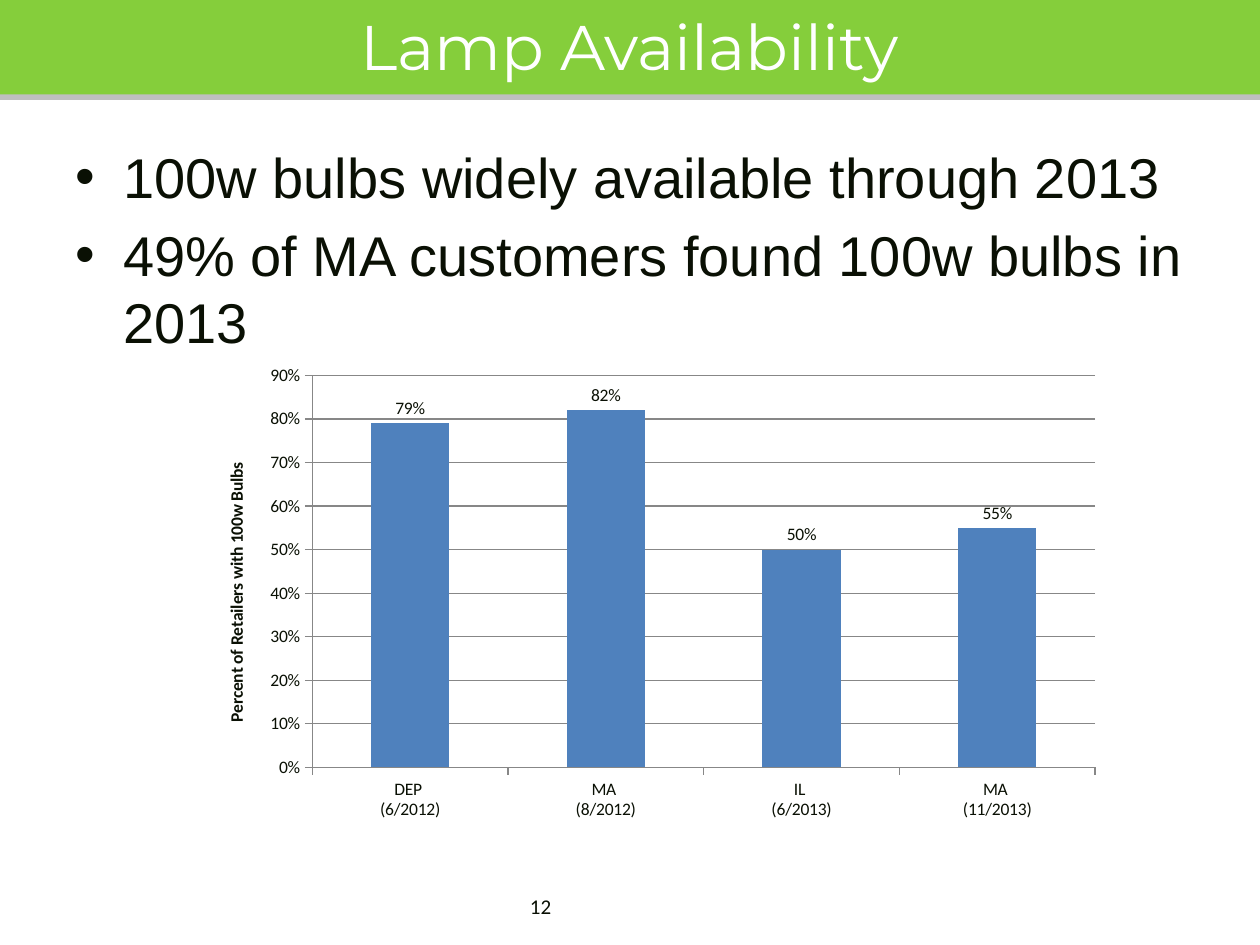
from typing import Any, NamedTuple

from lxml import etree
from pptx import Presentation
from pptx.chart.data import CategoryChartData
from pptx.dml.color import RGBColor
from pptx.enum.chart import XL_CHART_TYPE, XL_LABEL_POSITION, XL_TICK_MARK
from pptx.enum.shapes import MSO_CONNECTOR, MSO_SHAPE
from pptx.enum.text import MSO_ANCHOR, PP_ALIGN
from pptx.oxml.ns import qn
from pptx.util import Inches, Pt

COLUMN = XL_CHART_TYPE.COLUMN_CLUSTERED
OUTSIDE_END = XL_LABEL_POSITION.OUTSIDE_END
TICK_OUT = XL_TICK_MARK.OUTSIDE
MIDDLE, TOP = MSO_ANCHOR.MIDDLE, MSO_ANCHOR.TOP
CENTER, LEFT = PP_ALIGN.CENTER, PP_ALIGN.LEFT

GREEN = RGBColor(0x85, 0xCE, 0x3B)
GREY = RGBColor(0xBF, 0xBF, 0xBF)
AXIS_GREY = RGBColor(0x87, 0x87, 0x87)
BLUE = RGBColor(0x4F, 0x81, 0xBD)
INK = RGBColor(0x0A, 0x10, 0x04)
WHITE = RGBColor(0xFF, 0xFF, 0xFF)

SLIDE_WIDTH, SLIDE_HEIGHT = Inches(10), Inches(7.5)
BULLET_INDENT = Inches(0.38)


class Box(NamedTuple):
    """Left, top, width and height as percentages of the slide."""
    left: float
    top: float
    width: float
    height: float

    def lengths(self) -> tuple[int, ...]:
        sizes = (SLIDE_WIDTH, SLIDE_HEIGHT) * 2
        return tuple(round(size * share / 100) for size, share in zip(sizes, self))


TITLE_BOX = Box(-0.1, -0.4, 100.1, 10.4)
BODY_BOX = Box(5, 14.4, 91.7, 25.6)
CHART_BOX = Box(15.8, 37.73, 72.5, 50)
NUMBER_BOX = Box(37.5, 94.4, 10.8, 2.93)
RULE_TOP = 0.76

TITLE_FONT = {"name": "Montserrat", "size": Pt(36)}
BODY_FONT = {"name": "Arial", "size": Pt(32)}
NUMBER_FONT = {"name": "Calibri", "size": Pt(12)}
CHART_FONT = {"name": "Calibri", "size": Pt(10)}
BULLETS = [
    "100w bulbs widely available through 2013",
    "49% of MA customers found 100w bulbs in 2013",
]
AVAILABILITY = {
    "DEP \n(6/2012)": 0.79,
    "MA \n(8/2012)": 0.82,
    "IL \n(6/2013)": 0.50,
    "MA \n(11/2013)": 0.55,
}
PLOT_LAYOUT = {"x": 0.124, "y": 0.04, "w": 0.857, "h": 0.83}


def set_font(font: Any, values: dict[str, Any], color: RGBColor) -> None:
    for name, value in values.items():
        setattr(font, name, value)
    font.color.rgb = color


def add_bullet(paragraph: Any) -> None:
    properties = paragraph._p.get_or_add_pPr()
    properties.set("marL", str(BULLET_INDENT))
    properties.set("indent", str(-BULLET_INDENT))
    etree.SubElement(properties, qn("a:buFont"), typeface="Arial")
    etree.SubElement(properties, qn("a:buChar"), char="•")


def write_text(shape: Any, lines: list[str], font: dict[str, Any], color: RGBColor,
               anchor: Any, alignment: Any, bulleted: bool = False) -> None:
    frame = shape.text_frame
    frame.word_wrap = True
    frame.vertical_anchor = anchor
    for index, line in enumerate(lines):
        paragraph = frame.add_paragraph() if index else frame.paragraphs[0]
        paragraph.text = line
        paragraph.alignment = alignment
        if index:
            paragraph.space_before = Pt(6.4)
        if bulleted:
            add_bullet(paragraph)
        set_font(paragraph.runs[0].font, font, color)


def add_title_band(slide: Any) -> None:
    rule = slide.shapes.add_connector(
        MSO_CONNECTOR.STRAIGHT, 0, Inches(RULE_TOP), SLIDE_WIDTH, Inches(RULE_TOP))
    rule.line.color.rgb = GREY
    rule.line.width = Pt(5)
    etree.SubElement(rule._element.spPr, qn("a:effectLst"))
    band = slide.shapes.add_shape(MSO_SHAPE.RECTANGLE, *TITLE_BOX.lengths())
    band.shadow.inherit = False
    band.fill.solid()
    band.fill.fore_color.rgb = GREEN
    band.line.fill.background()
    write_text(band, ["Lamp Availability"], TITLE_FONT, WHITE, MIDDLE, CENTER)


def place_plot(chart: Any) -> None:
    """Fix the inner plot area as shares of the chart."""
    plot_area = chart._chartSpace.chart.plotArea
    for old in plot_area.findall(qn("c:layout")):
        plot_area.remove(old)
    layout = etree.Element(qn("c:layout"))
    plot_area.insert(0, layout)
    manual = etree.SubElement(layout, qn("c:manualLayout"))
    etree.SubElement(manual, qn("c:layoutTarget"), val="inner")
    for side in "xy":
        etree.SubElement(manual, qn(f"c:{side}Mode"), val="edge")
    for side, share in PLOT_LAYOUT.items():
        etree.SubElement(manual, qn(f"c:{side}"), val=str(share))


def add_availability_chart(slide: Any) -> None:
    data = CategoryChartData(number_format="0%")
    data.categories = list(AVAILABILITY)
    data.add_series("Series 1", list(AVAILABILITY.values()))
    chart = slide.shapes.add_chart(COLUMN, *CHART_BOX.lengths(), data).chart
    chart.has_legend = chart.has_title = False
    set_font(chart.font, CHART_FONT, INK)

    plot = chart.plots[0]
    plot.gap_width = 150
    plot.vary_by_categories = False
    fill = plot.series[0].format.fill
    fill.solid()
    fill.fore_color.rgb = BLUE
    plot.has_data_labels = True
    labels = plot.data_labels
    label_format = {"show_value": True, "number_format": "0%",
                    "number_format_is_linked": False, "position": OUTSIDE_END}
    for name, value in label_format.items():
        setattr(labels, name, value)

    value_axis = chart.value_axis
    for axis in (chart.category_axis, value_axis):
        axis.major_tick_mark = TICK_OUT
        axis.format.line.color.rgb = AXIS_GREY
    value_axis.minimum_scale, value_axis.maximum_scale = 0, 0.9
    value_axis.major_unit = 0.1
    value_axis.tick_labels.number_format = "0%"
    value_axis.tick_labels.number_format_is_linked = False
    value_axis.has_major_gridlines = True
    value_axis.major_gridlines.format.line.color.rgb = AXIS_GREY
    title = value_axis.axis_title.text_frame
    title.text = "Percent of Retailers with 100w Bulbs"
    set_font(title.paragraphs[0].runs[0].font, CHART_FONT | {"bold": True}, INK)
    place_plot(chart)


def main() -> None:
    presentation = Presentation()
    presentation.slide_width, presentation.slide_height = SLIDE_WIDTH, SLIDE_HEIGHT
    slide = presentation.slides.add_slide(presentation.slide_layouts[6])
    add_title_band(slide)
    number = slide.shapes.add_textbox(*NUMBER_BOX.lengths())
    write_text(number, ["12"], NUMBER_FONT, INK, MIDDLE, CENTER)
    add_availability_chart(slide)
    body = slide.shapes.add_textbox(*BODY_BOX.lengths())
    write_text(body, BULLETS, BODY_FONT, INK, TOP, LEFT, bulleted=True)
    presentation.save("out.pptx")


if __name__ == "__main__":
    main()
